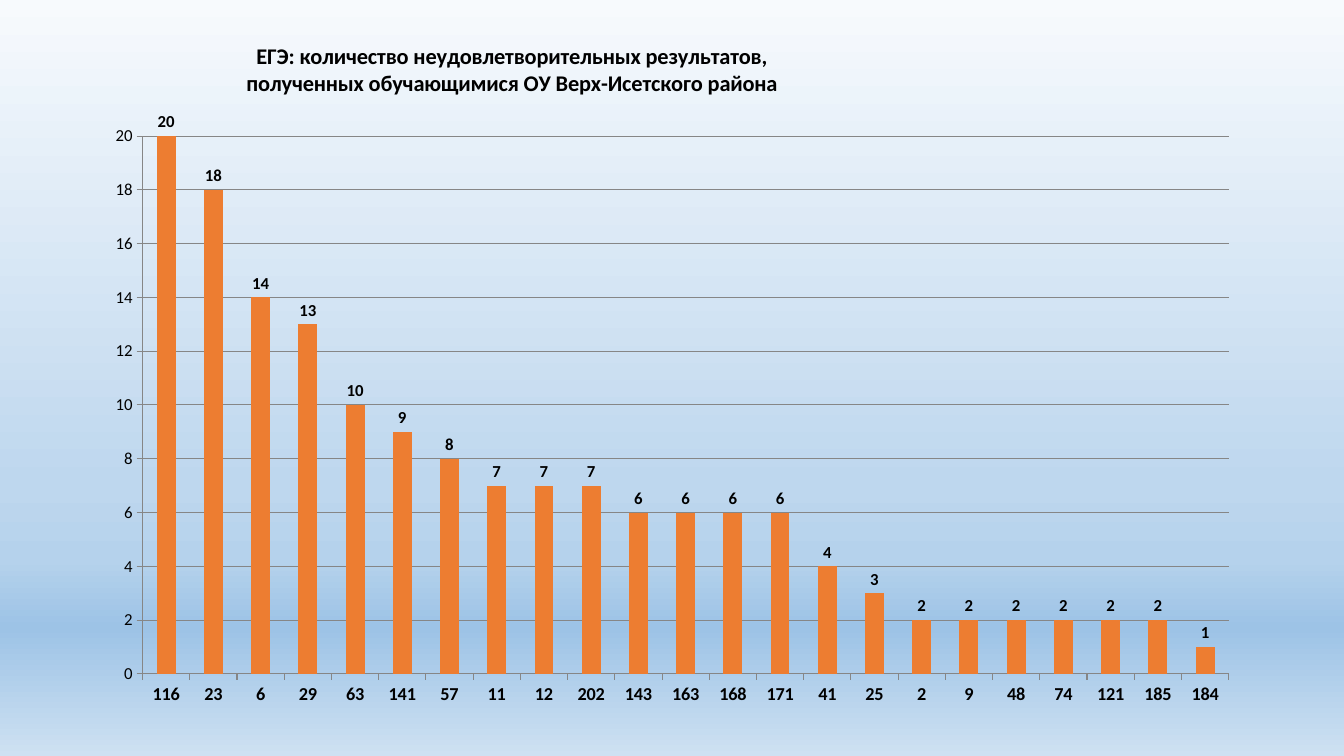
import dataclasses

import pptx
import pptx.chart.data
import pptx.dml.color
import pptx.enum.chart
import pptx.oxml
import pptx.oxml.ns
import pptx.util

Pt = pptx.util.Pt
Color = pptx.dml.color.RGBColor.from_string


@dataclasses.dataclass(frozen=True)
class Theme:
    font: str = "Calibri"
    text: str = "000000"
    bar: str = "ED7D31"
    line: str = "868686"
    title_size: int = 16
    category_size: int = 13
    text_size: int = 12
    # Position in percent and colour of each background stop
    background: tuple = ((0, "F7FAFD"), (64, "BED7EE"), (74, "B5D2EC"),
                         (83, "9DC3E6"), (100, "CEE1F2"))


def place(element, index, **fractions):
    """Give a chart part a manual layout, in fractions of the chart."""
    for layout in element.findall(pptx.oxml.ns.qn("c:layout")):
        element.remove(layout)
    target = '<c:layoutTarget val="inner"/>' if "w" in fractions else ""
    modes = "".join(f'<c:{key}Mode val="edge"/>' for key in "xy")
    values = "".join(f'<c:{key} val="{value}"/>' for key, value in fractions.items())
    element.insert(index, pptx.oxml.parse_xml(
        f'<c:layout {pptx.oxml.ns.nsdecls("c")}><c:manualLayout>'
        f"{target}{modes}{values}</c:manualLayout></c:layout>"))


theme = Theme()
presentation = pptx.Presentation()
presentation.slide_width = Pt(960)
presentation.slide_height = Pt(540)
slide = presentation.slides.add_slide(presentation.slide_layouts[6])

# Background gradient, top to bottom
fill = slide.background.fill
fill.gradient()
fill.gradient_angle = 270
stops = slide.element.find(".//" + pptx.oxml.ns.qn("a:gsLst"))
for stop in list(stops):
    stops.remove(stop)
for percent, color in theme.background:
    stops.append(pptx.oxml.parse_xml(
        f'<a:gs {pptx.oxml.ns.nsdecls("a")} pos="{percent * 1000}">'
        f'<a:srgbClr val="{color}"/></a:gs>'))

# School numbers and their unsatisfactory results
results = [
    ("116", 20), ("23", 18), ("6", 14), ("29", 13), ("63", 10), ("141", 9),
    ("57", 8), ("11", 7), ("12", 7), ("202", 7), ("143", 6), ("163", 6),
    ("168", 6), ("171", 6), ("41", 4), ("25", 3), ("2", 2), ("9", 2),
    ("48", 2), ("74", 2), ("121", 2), ("185", 2), ("184", 1),
]
schools, counts = zip(*results)
chart_data = pptx.chart.data.CategoryChartData()
chart_data.categories = schools
chart_data.add_series("Series 1", counts)

# Chart
chart = slide.shapes.add_chart(
    pptx.enum.chart.XL_CHART_TYPE.COLUMN_CLUSTERED,
    Pt(66.24), Pt(20.16), Pt(828), Pt(493.92), chart_data).chart
chart.has_legend = False
chart.font.name = theme.font
chart.font.size = Pt(theme.text_size)
chart.font.color.rgb = Color(theme.text)
place(chart.element.find(".//" + pptx.oxml.ns.qn("c:plotArea")), 0,
      x=0.043, y=0.156, w=0.937, h=0.778)

# Chart title
chart.has_title = True
title = chart.chart_title
title.include_in_layout = False
title.text_frame.text = ("ЕГЭ: количество неудовлетворительных результатов,\n"
                         "полученных обучающимися ОУ Верх-Исетского района")
for paragraph in title.text_frame.paragraphs:
    paragraph.font.name = theme.font
    paragraph.font.size = Pt(theme.title_size)
    paragraph.font.bold = True
    paragraph.font.color.rgb = Color(theme.text)
place(title.element, 1, x=0.13, y=0.015)

# Bars and value labels
plot = chart.plots[0]
plot.gap_width = 150
plot.vary_by_categories = False
bars = plot.series[0].format.fill
bars.solid()
bars.fore_color.rgb = Color(theme.bar)
plot.has_data_labels = True
labels = plot.data_labels
labels.show_value = True
labels.position = pptx.enum.chart.XL_LABEL_POSITION.OUTSIDE_END
labels.font.name = theme.font
labels.font.size = Pt(theme.text_size)
labels.font.bold = True
labels.font.color.rgb = Color(theme.text)

# Axes and gridlines
schools_axis, counts_axis = chart.category_axis, chart.value_axis
counts_axis.minimum_scale = 0
counts_axis.maximum_scale = 20
counts_axis.major_unit = 2
counts_axis.has_major_gridlines = True
schools_axis.tick_labels.font.size = Pt(theme.category_size)
schools_axis.tick_labels.font.bold = True
for axis in (schools_axis, counts_axis):
    axis.major_tick_mark = pptx.enum.chart.XL_TICK_MARK.OUTSIDE
    axis.minor_tick_mark = pptx.enum.chart.XL_TICK_MARK.NONE
for part in (schools_axis, counts_axis, counts_axis.major_gridlines):
    part.format.line.color.rgb = Color(theme.line)
    part.format.line.width = Pt(0.75)

presentation.save("out.pptx")
